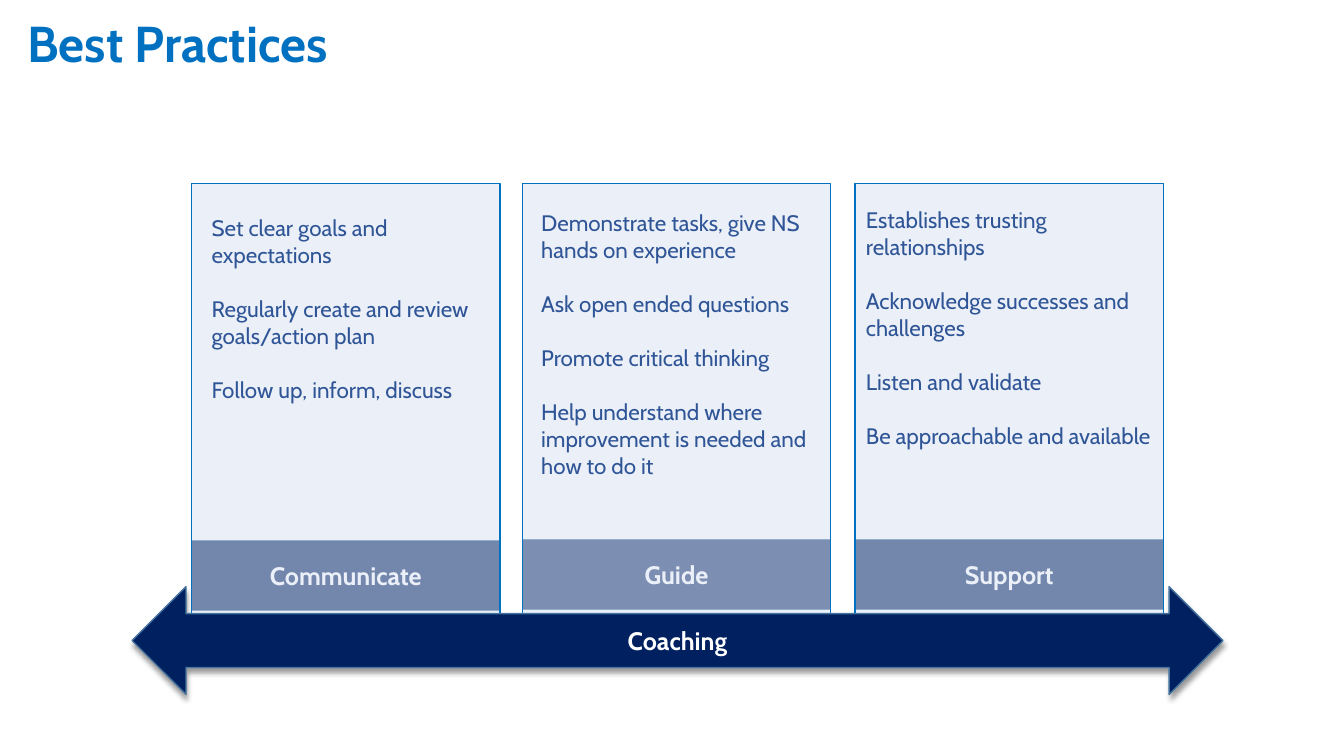
from dataclasses import dataclass

import lxml.etree
import pptx
import pptx.dml.color
import pptx.enum.shapes
import pptx.enum.text
import pptx.oxml.ns
import pptx.util
from pptx.util import Inches

COLOURS = {
    "title": "0070C0",
    "navy": "002060",
    "edge": "43739E",
    "panel": "DAE3F3",
    "body": "2F5597",
    "white": "FFFFFF",
}
FONT = "Cabin"
PANEL_TOP, PANEL_WIDTH, PANEL_HEIGHT = 1.82, 3.06, 4.53
BAND_HEIGHT = 0.7
RECTANGLE = pptx.enum.shapes.MSO_SHAPE.RECTANGLE
CENTER = pptx.enum.text.PP_ALIGN.CENTER
MIDDLE = pptx.enum.text.MSO_ANCHOR.MIDDLE


@dataclass
class Box:
    left: float
    top: float
    width: float
    height: float

    def lengths(self) -> list[int]:
        return [Inches(n) for n in (self.left, self.top, self.width, self.height)]


@dataclass
class Pillar:
    label: str
    left: float
    band_top: float
    text_box: Box
    practices: list[str]
    band_alpha: int = 100


PILLARS = [
    Pillar("Communicate", 1.9, 5.36, Box(2, 2.08, 2.94, 2.63), [
        "Set clear goals and expectations",
        "Regularly create and review goals/action plan",
        "Follow up, inform, discuss",
    ]),
    Pillar("Guide", 5.18, 5.35, Box(5.27, 2.03, 3, 2.79), [
        "Demonstrate tasks, give NS hands on experience",
        "Ask open ended questions",
        "Promote critical thinking",
        "Help understand where improvement is needed and how to do it",
    ], band_alpha=92),
    Pillar("Support", 8.48, 5.35, Box(8.49, 2, 3.05, 3.64), [
        "Establishes trusting relationships",
        "Acknowledge successes and challenges",
        "Listen and validate",
        "Be approachable and available",
    ]),
]


def rgb(name: str) -> pptx.dml.color.RGBColor:
    return pptx.dml.color.RGBColor.from_string(COLOURS[name])


def add_child(parent, tag: str, **attributes):
    child = lxml.etree.SubElement(parent, pptx.oxml.ns.qn(tag))
    for name, value in attributes.items():
        child.set(name, str(value))
    return child


def write(para, text: str, size: int, colour: str, bold: bool = False) -> None:
    span = para.add_run()
    span.text = text
    formats = {"name": FONT, "size": pptx.util.Pt(size), "bold": bold}
    for name, value in formats.items():
        setattr(span.font, name, value)
    span.font.color.rgb = rgb(colour)


def add_block(page, kind, box: Box, fill: str, line: str, alpha: int = 100):
    """Draw a filled, outlined shape; alpha is its opacity in percent."""
    block = page.shapes.add_shape(kind, *box.lengths())
    block.shadow.inherit = False
    block.fill.solid()
    block.fill.fore_color.rgb = rgb(fill)
    if alpha < 100:
        colour = block.fill._xPr.find(".//" + pptx.oxml.ns.qn("a:srgbClr"))
        add_child(colour, "a:alpha", val=alpha * 1000)
    block.line.color.rgb = rgb(line)
    block.line.width = pptx.util.Pt(1)
    return block


def add_label(block, text: str) -> None:
    block.text_frame.vertical_anchor = MIDDLE
    para = block.text_frame.paragraphs[0]
    para.alignment = CENTER
    write(para, text, 18, "white", bold=True)


def add_soft_shadow(block) -> None:
    effects = block._element.spPr.find(pptx.oxml.ns.qn("a:effectLst"))
    shadow = add_child(effects, "a:outerShdw", blurRad=pptx.util.Pt(4),
                       dist=pptx.util.Pt(3), dir=90 * 60000, rotWithShape=0)
    colour = add_child(shadow, "a:srgbClr", val="000000")
    add_child(colour, "a:alpha", val=40000)


def add_practices(page, pillar: Pillar) -> None:
    frame = page.shapes.add_textbox(*pillar.text_box.lengths()).text_frame
    frame.word_wrap = True
    for index, practice in enumerate(pillar.practices):
        para = frame.add_paragraph() if index else frame.paragraphs[0]
        if index:
            para.space_before = pptx.util.Pt(19.4)
        write(para, practice, 16, "body")


def add_title(page, text: str) -> None:
    title = page.shapes.title
    names = ("left", "top", "width", "height")
    for name, value in zip(names, Box(0.17, 0, 11.5, 0.91).lengths()):
        setattr(title, name, value)
    title.text_frame.vertical_anchor = MIDDLE
    para = title.text_frame.paragraphs[0]
    para.alignment = pptx.enum.text.PP_ALIGN.LEFT
    para.line_spacing = 0.9
    write(para, text, 36, "title", bold=True)


def main() -> None:
    deck = pptx.Presentation()
    deck.slide_width, deck.slide_height = Inches(13.33), Inches(7.5)
    page = deck.slides.add_slide(deck.slide_layouts[5])
    add_title(page, "Best Practices")

    for pillar in PILLARS:
        band = Box(pillar.left, pillar.band_top, PANEL_WIDTH, BAND_HEIGHT)
        add_label(add_block(page, RECTANGLE, band, "navy", "edge", pillar.band_alpha),
                  pillar.label)
        panel = Box(pillar.left, PANEL_TOP, PANEL_WIDTH, PANEL_HEIGHT)
        add_block(page, RECTANGLE, panel, "panel", "title", alpha=53)
        add_practices(page, pillar)

    arrow = add_block(page, pptx.enum.shapes.MSO_SHAPE.LEFT_RIGHT_ARROW,
                      Box(1.31, 5.82, 10.82, 1.07), "navy", "edge")
    add_soft_shadow(arrow)
    add_label(arrow, "Coaching")
    deck.save("out.pptx")


if __name__ == "__main__":
    main()
